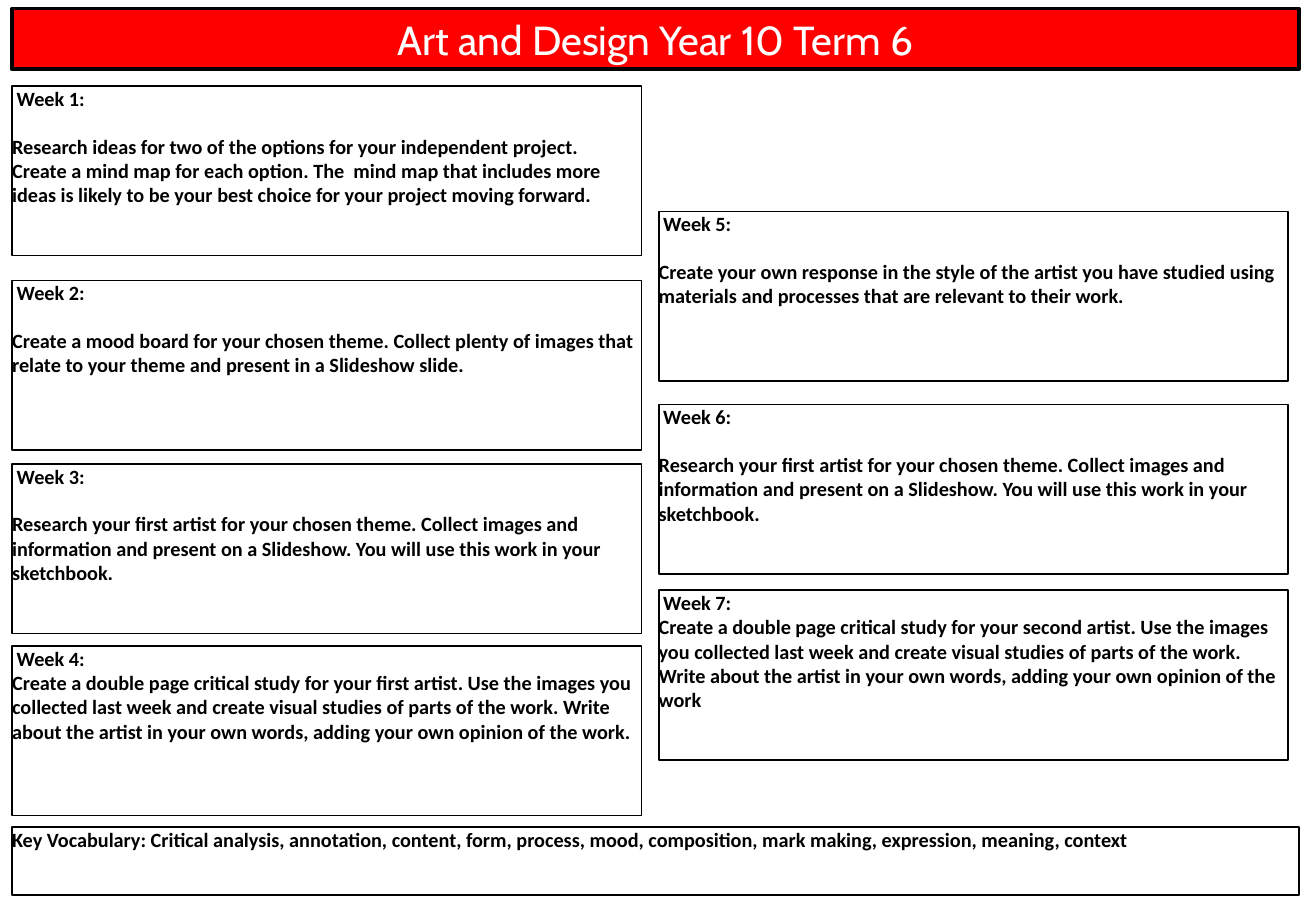
import dataclasses

import pptx
import pptx.dml.color
import pptx.enum.shapes
import pptx.enum.text
import pptx.util


@dataclasses.dataclass(frozen=True)
class Theme:
    """Colours, fonts and sizes of the slide."""
    banner: str = "FF0000"
    banner_text: str = "FFFFFF"
    ink: str = "000000"
    title_font: str = "Cabin"
    body_font: str = "Calibri"
    title_size: float = 24
    body_size: float = 12
    banner_line: float = 2.25
    panel_line: float = 1
    body_gap: float = 13.9


THEME = Theme()
WIDTH, HEIGHT = pptx.util.Inches(10.83), pptx.util.Inches(7.5)

# Boxes are percentages of the slide: left, top, width, height.
MARGIN, RIGHT_COLUMN = 0.92, 50.05
FULL_WIDTH, PANEL_WIDTH, PANEL_HEIGHT = 97.78, 47.83, 18.6
TITLE_BOX = (MARGIN, 0.93, FULL_WIDTH, 6.67)
VOCABULARY_BOX = (MARGIN, 90.8, FULL_WIDTH, 7.47)

TITLE = "Art and Design Year 10 Term 6"
VOCABULARY = ("Key Vocabulary: Critical analysis, annotation, content, form, process, mood, "
              "composition, mark making, expression, meaning, context")
FIRST_ARTIST = ("Research your first artist for your chosen theme. Collect images and information "
                "and present on a Slideshow. You will use this work in your sketchbook.")
CRITICAL_STUDY = ("Create a double page critical study for your {} artist. Use the images you "
                  "collected last week and create visual studies of parts of the work. Write about "
                  "the artist in your own words, adding your own opinion of the work")
WEEKS = [
    (MARGIN, 9.47, THEME.body_gap,
     "Research ideas for two of the options for your independent project.  Create a mind map for "
     "each option. The  mind map that includes more ideas is likely to be your best choice for "
     "your project moving forward."),
    (MARGIN, 30.8, THEME.body_gap,
     "Create a mood board for your chosen theme. Collect plenty of images that relate to your "
     "theme and present in a Slideshow slide."),
    (MARGIN, 50.93, THEME.body_gap, FIRST_ARTIST),
    (MARGIN, 70.93, 0, CRITICAL_STUDY.format("first") + "."),
    (RIGHT_COLUMN, 23.2, THEME.body_gap,
     "Create your own response in the style of the artist you have studied using materials and "
     "processes that are relevant to their work."),
    (RIGHT_COLUMN, 44.4, THEME.body_gap, FIRST_ARTIST),
    (RIGHT_COLUMN, 64.8, 0, CRITICAL_STUDY.format("second")),
]


def to_lengths(box):
    """Turn a box in percentages into slide lengths."""
    left, top, width, height = box
    return (int(WIDTH * left / 100), int(HEIGHT * top / 100),
            int(WIDTH * width / 100), int(HEIGHT * height / 100))


def set_outline(shape, points):
    """Give a shape its black outline."""
    shape.line.color.rgb = pptx.dml.color.RGBColor.from_string(THEME.ink)
    shape.line.width = pptx.util.Pt(points)


def set_font(paragraph, name, size, colour, bold):
    """Format every run of a paragraph."""
    for run in paragraph.runs:
        run.font.name = name
        run.font.size = pptx.util.Pt(size)
        run.font.bold = bold
        run.font.color.rgb = pptx.dml.color.RGBColor.from_string(colour)


def add_banner(slide, box):
    """Place the title as a red banner."""
    title = slide.shapes.title
    title.left, title.top, title.width, title.height = to_lengths(box)
    title.fill.solid()
    title.fill.fore_color.rgb = pptx.dml.color.RGBColor.from_string(THEME.banner)
    set_outline(title, THEME.banner_line)
    frame = title.text_frame
    frame.text = TITLE
    frame.auto_size = pptx.enum.text.MSO_AUTO_SIZE.NONE
    frame.vertical_anchor = pptx.enum.text.MSO_ANCHOR.MIDDLE
    frame.paragraphs[0].alignment = pptx.enum.text.PP_ALIGN.CENTER
    set_font(frame.paragraphs[0], THEME.title_font, THEME.title_size, THEME.banner_text, False)


def add_panel(slide, box, lines, gap=0):
    """Place an outlined panel with its lines of text, separated by a gap."""
    panel = slide.shapes.add_shape(pptx.enum.shapes.MSO_SHAPE.RECTANGLE, *to_lengths(box))
    panel.shadow.inherit = False
    panel.fill.background()
    set_outline(panel, THEME.panel_line)
    frame = panel.text_frame
    frame.word_wrap = True
    frame.vertical_anchor = pptx.enum.text.MSO_ANCHOR.TOP
    frame.margin_left = frame.margin_right = frame.margin_top = frame.margin_bottom = 0
    frame.text = "\n".join(lines)
    for index, paragraph in enumerate(frame.paragraphs):
        paragraph.alignment = pptx.enum.text.PP_ALIGN.LEFT
        paragraph.space_before = pptx.util.Pt(gap if index else 0)
        set_font(paragraph, THEME.body_font, THEME.body_size, THEME.ink, True)


def add_weeks(slide):
    """Place one panel for each week."""
    for number, (left, top, gap, task) in enumerate(WEEKS, start=1):
        add_panel(slide, (left, top, PANEL_WIDTH, PANEL_HEIGHT), [f" Week {number}:", task], gap)


def main():
    """Build the term plan and save it."""
    presentation = pptx.Presentation()
    presentation.slide_width, presentation.slide_height = WIDTH, HEIGHT
    slide = presentation.slides.add_slide(presentation.slide_layouts.get_by_name("Title Only"))
    add_banner(slide, TITLE_BOX)
    add_weeks(slide)
    add_panel(slide, VOCABULARY_BOX, [VOCABULARY])
    presentation.save("out.pptx")


if __name__ == "__main__":
    main()
